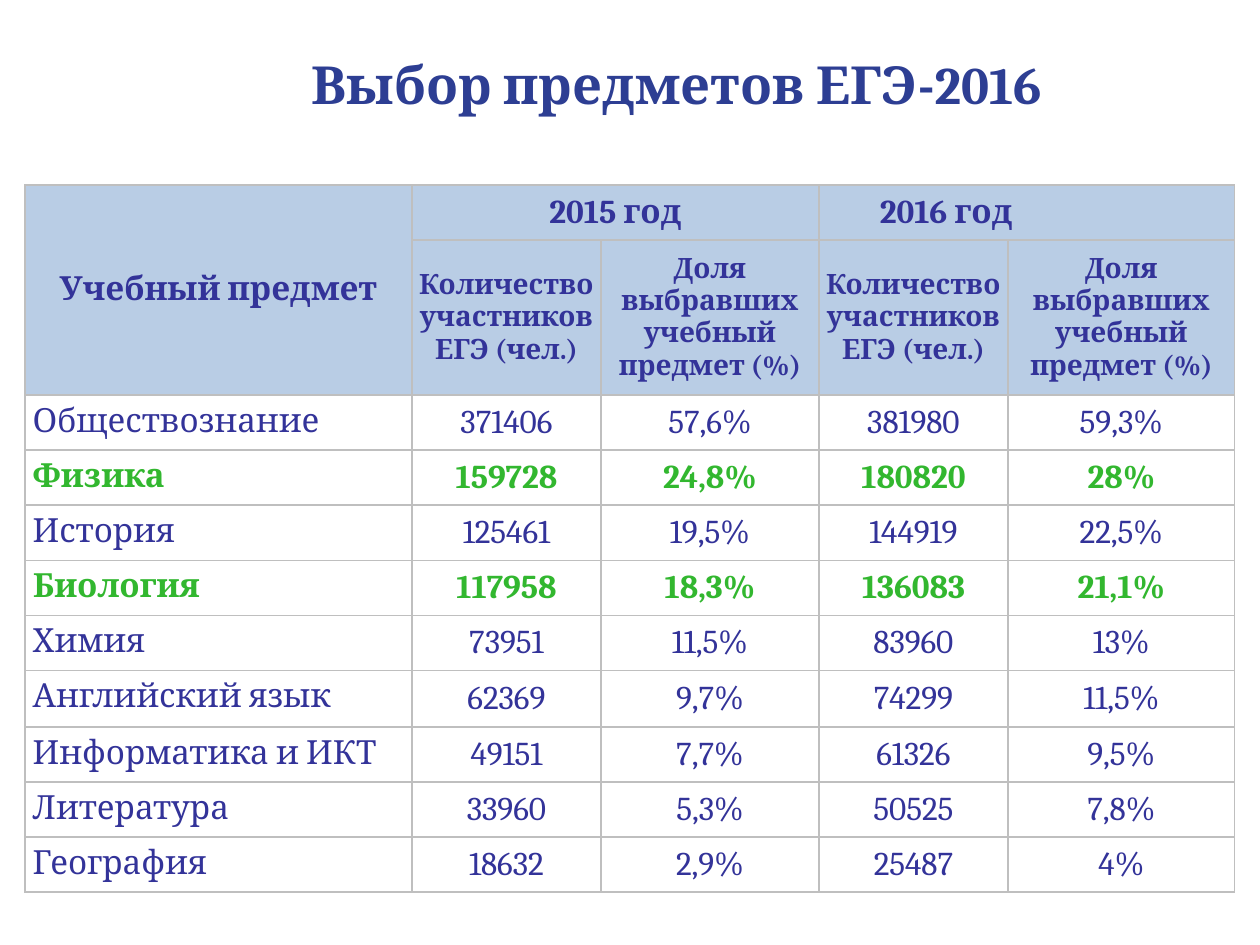
from lxml import etree
from pptx import Presentation
from pptx.dml.color import RGBColor
from pptx.enum.text import MSO_ANCHOR as ANCHOR, PP_ALIGN as ALIGN
from pptx.oxml import parse_xml
from pptx.oxml.ns import nsdecls, qn
from pptx.util import Inches, Pt

FONT = "Cambria"
TITLE_BLUE = RGBColor(0x2D, 0x3E, 0x93)
TEXT_BLUE = RGBColor(0x33, 0x33, 0x99)
GREEN = RGBColor(0x32, 0xB7, 0x2F)
HEADER_FILL = RGBColor(0xB9, 0xCD, 0xE5)
WHITE = RGBColor(0xFF, 0xFF, 0xFF)
BORDER = RGBColor(0xBF, 0xBF, 0xBF)

COL_WIDTHS = [3.07, 1.5, 1.73, 1.5, 1.8]
ROW_HEIGHTS = [0.43, 1.23] + [0.43] * 5 + [0.45] + [0.43] * 3
SUBHEADS = ["Количество участников ЕГЭ (чел.)", "Доля выбравших учебный предмет (%)"]
SUBJECTS = [
    ("Обществознание", "371406", "57,6%", "381980", "59,3%"),
    ("Физика", "159728", "24,8%", "180820", "28%"),
    ("История", "125461", "19,5%", "144919", "22,5%"),
    ("Биология", "117958", "18,3%", "136083", "21,1%"),
    ("Химия", "73951", "11,5%", "83960", "13%"),
    ("Английский язык", "62369", "9,7%", "74299", "11,5%"),
    ("Информатика и ИКТ", "49151", "7,7%", "61326", "9,5%"),
    ("Литература", "33960", "5,3%", "50525", "7,8%"),
    ("География", "18632", "2,9%", "25487", "4%"),
]
HIGHLIGHTED = {"Физика", "Биология"}


def style_run(r, size, color, bold):
    r.font.size = Pt(size)
    r.font.name = FONT
    r.font.bold = bold
    r.font.color.rgb = color


def add_title(slide, left, top, width, height):
    tf = slide.shapes.add_textbox(left, top, width, height).text_frame
    tf.word_wrap = True
    tf.text = "Выбор предметов ЕГЭ-2016"
    p = tf.paragraphs[0]
    p.alignment = ALIGN.CENTER
    r = p.runs[0]
    style_run(r, 30, TITLE_BLUE, True)
    shadow = parse_xml(
        f'<a:effectLst {nsdecls("a")}><a:outerShdw blurRad="38100" dist="38100" '
        'dir="2700000" algn="tl"><a:srgbClr val="000000"><a:alpha val="43000"/>'
        '</a:srgbClr></a:outerShdw></a:effectLst>')
    r.font._element.find(qn("a:solidFill")).addnext(shadow)


def set_borders(cell):
    tc_pr = cell._tc.get_or_add_tcPr()
    for side in ("lnL", "lnR", "lnT", "lnB"):
        ln = etree.SubElement(tc_pr, qn(f"a:{side}"), w=str(Pt(1)))
        fill = etree.SubElement(ln, qn("a:solidFill"))
        etree.SubElement(fill, qn("a:srgbClr"), val=str(BORDER))


def fill_cell(cell, text, size=19, color=TEXT_BLUE, bold=False, centered=True):
    cell.text = text
    cell.vertical_anchor = ANCHOR.MIDDLE if centered else ANCHOR.TOP
    cell.margin_left = Inches(0 if centered else 0.06)
    p = cell.text_frame.paragraphs[0]
    p.alignment = ALIGN.CENTER if centered else ALIGN.LEFT
    style_run(p.runs[0], size, color, bold)


def add_subject_table(slide, left, top, width, height):
    table = slide.shapes.add_table(
        len(ROW_HEIGHTS), len(COL_WIDTHS), left, top, width, height).table
    for column, w in zip(table.columns, COL_WIDTHS):
        column.width = Inches(w)
    for row, h in zip(table.rows, ROW_HEIGHTS):
        row.height = Inches(h)
    for i, row in enumerate(table.rows):
        for cell in row.cells:
            set_borders(cell)
            cell.fill.solid()
            cell.fill.fore_color.rgb = HEADER_FILL if i < 2 else WHITE
            cell.margin_left = cell.margin_right = 0
            cell.margin_top = cell.margin_bottom = Inches(0.06)

    table.cell(0, 0).merge(table.cell(1, 0))
    fill_cell(table.cell(0, 0), "Учебный предмет", bold=True)
    for col, year in ((1, "2015 год"), (3, "2016 год")):
        table.cell(0, col).merge(table.cell(0, col + 1))
        fill_cell(table.cell(0, col), year, bold=True)
        for i, text in enumerate(SUBHEADS):
            fill_cell(table.cell(1, col + i), text, size=16, bold=True)
    table.cell(0, 3).margin_right = Inches(1.28)

    for i, values in enumerate(SUBJECTS, start=2):
        bold = values[0] in HIGHLIGHTED
        color = GREEN if bold else TEXT_BLUE
        for j, text in enumerate(values):
            fill_cell(table.cell(i, j), text, color=color, bold=bold, centered=j > 0)


def main():
    prs = Presentation()
    prs.slide_width, prs.slide_height = Inches(10), Inches(7.5)
    slide = prs.slides.add_slide(prs.slide_layouts[6])
    add_title(slide, Inches(1.67), Inches(0.36), Inches(7.4), Inches(0.61))
    add_subject_table(slide, Inches(0.2), Inches(1.47), Inches(9.6), Inches(5.54))
    prs.save("out.pptx")


if __name__ == "__main__":
    main()
